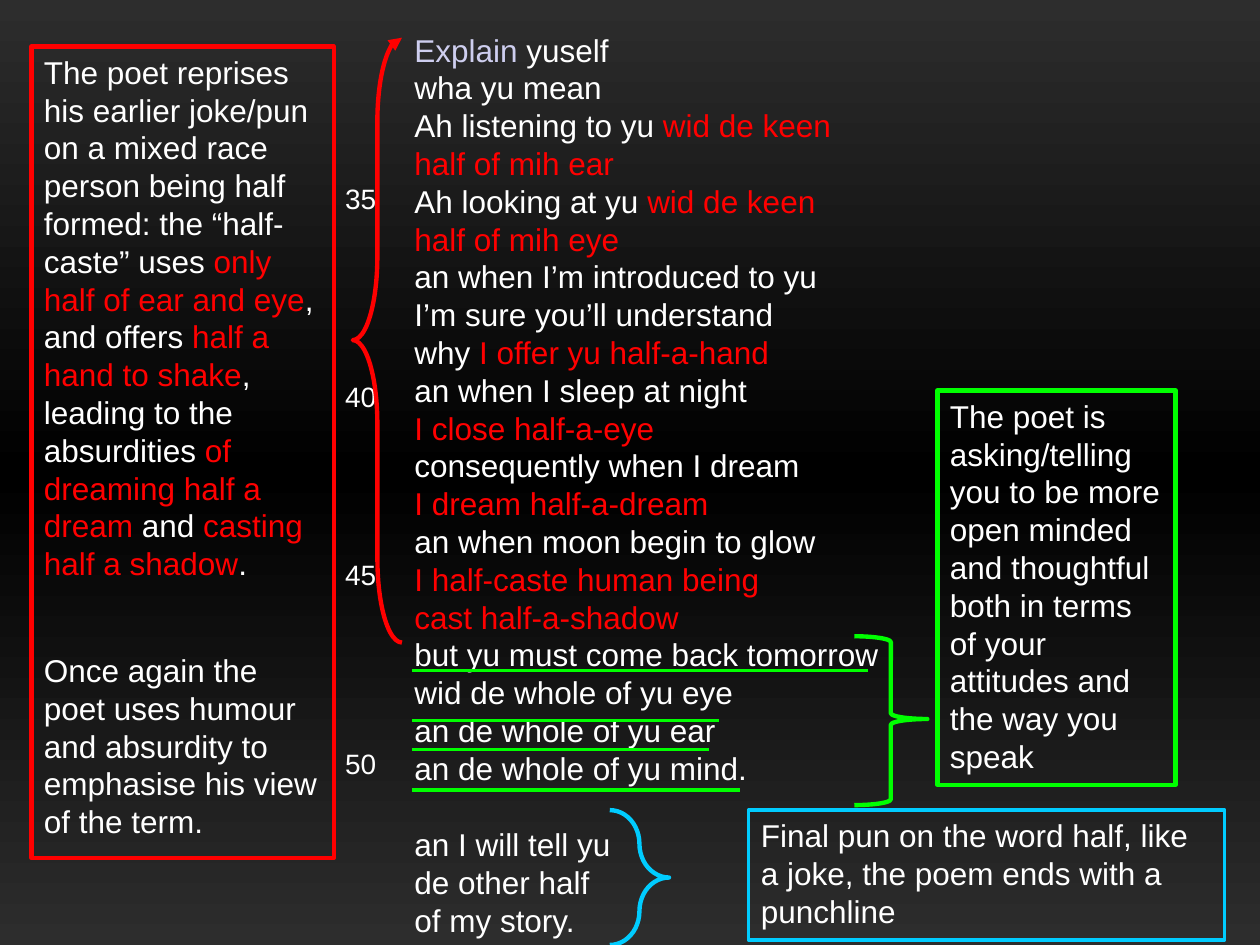
from copy import deepcopy

from lxml import etree
from pptx import Presentation
from pptx.dml.color import RGBColor
from pptx.enum.shapes import MSO_CONNECTOR, MSO_SHAPE
from pptx.enum.text import MSO_ANCHOR, MSO_AUTO_SIZE, PP_ALIGN
from pptx.oxml.ns import qn
from pptx.util import Inches, Pt

RECT = MSO_SHAPE.RECTANGLE
LEFT_BRACE = MSO_SHAPE.LEFT_BRACE
RIGHT_BRACE = MSO_SHAPE.RIGHT_BRACE
STRAIGHT = MSO_CONNECTOR.STRAIGHT
TOP, MIDDLE = MSO_ANCHOR.TOP, MSO_ANCHOR.MIDDLE
GROW = MSO_AUTO_SIZE.SHAPE_TO_FIT_TEXT
LEFT = PP_ALIGN.LEFT

FONT = "Arial"
COLORS = {
    "edge": "2D2D2D",
    "black": "000000",
    "white": "FFFFFF",
    "lavender": "CECEEF",
    "red": "FF0000",
    "green": "00FF00",
    "blue": "00CCFF",
}

# Each paragraph is a list of (color, text); "\n" is a line break.
POEM = [
    [
        ("lavender", "Explain "),
        ("white", "yuself\nwha yu mean\nAh listening to yu "),
        ("red", "wid de keen\nhalf of mih ear\n"),
        ("white", "Ah looking at yu "),
        ("red", "wid de keen\nhalf of mih eye\n"),
        ("white", "an when I’m introduced to yu\nI’m sure you’ll understand\nwhy "),
        ("red", "I offer yu half-a-hand\n"),
        ("white", "an when I sleep at night\n"),
        ("red", "I close half-a-eye\n"),
        ("white", "consequently when I dream\n"),
        ("red", "I dream half-a-dream\n"),
        ("white", "an when moon begin to glow\n"),
        ("red", "I half-caste human being\ncast half-a-shadow\n"),
        ("white", "but yu must come back tomorrow\nwid de whole of yu eye\n"
                  "an de whole of yu ear\nan de whole of yu mind."),
    ],
    [("white", "an I will tell yu\nde other half\nof my story.")],
]
REPRISE_NOTE = [
    [
        ("white", "The poet reprises his earlier joke/pun on a mixed race person "
                  "being half formed: the “half-caste” uses "),
        ("red", "only half of ear and eye"),
        ("white", ", and offers "),
        ("red", "half a hand to shake"),
        ("white", ", leading to the absurdities "),
        ("red", "of dreaming half a dream"),
        ("white", " and "),
        ("red", "casting half a shadow"),
        ("white", "."),
    ],
    [("white", "Once again the poet uses humour and absurdity to emphasise "
               "his view of the term.")],
]
OPEN_MIND_NOTE = [[("white", "The poet is asking/telling you to be more open minded "
                             "and thoughtful both in terms of your attitudes and "
                             "the way you speak")]]
PUNCHLINE_NOTE = [[("white", "Final pun on the word half, like a joke, the poem ends "
                             "with a punchline")]]

LINE_NUMBERS = [(35, 1.39), (40, 2.96), (45, 4.38), (50, 5.88)]  # number, top
UNDERLINES = [(5.32, 6.89), (5.72, 5.71), (5.95, 5.63), (6.27, 5.87)]  # y, right end


def rgb(name):
    return RGBColor.from_string(COLORS[name])


def set_background(slide):
    fill = slide.background.fill
    fill.gradient()
    fill.gradient_angle = 90
    first = slide.element.find(".//" + qn("a:gs"))
    first.addnext(deepcopy(first))
    stops = zip(fill.gradient_stops, (0, 0.5, 1), ("edge", "black", "edge"))
    for stop, position, color in stops:
        stop.position = position
        stop.color.rgb = rgb(color)


def write_text(sp, paragraphs, size=18, gap=0, anchor=TOP, wrap=True):
    """Fill a shape with colored runs; gap is the space between paragraphs."""
    tf = sp.text_frame
    tf.word_wrap = wrap
    tf.auto_size = GROW
    tf.vertical_anchor = anchor
    for i, parts in enumerate(paragraphs):
        p = tf.add_paragraph() if i else tf.paragraphs[0]
        p.alignment = LEFT
        p.font.name = FONT
        p.font.size = Pt(size)
        if i:
            p.space_before = Pt(gap)
        for color, text in parts:
            for j, line in enumerate(text.split("\n")):
                if j:
                    p.add_line_break()
                if line:
                    r = p.add_run()
                    r.text = line
                    r.font.color.rgb = rgb(color)


def add_text(slide, box, paragraphs, **style):
    sp = slide.shapes.add_textbox(*map(Inches, box))
    write_text(sp, paragraphs, **style)


def add_outline(slide, kind, box, color, width=2.5):
    sp = slide.shapes.add_shape(kind, *map(Inches, box))
    sp.shadow.inherit = False
    sp.fill.background()
    sp.line.color.rgb = rgb(color)
    sp.line.width = Pt(width)
    return sp


def add_note(slide, box, color, paragraphs, width=2.5, gap=0):
    sp = add_outline(slide, RECT, box, color, width)
    write_text(sp, paragraphs, gap=gap)


def add_brace(slide, kind, box, color, curl, tip=0.5, arrow=False):
    sp = add_outline(slide, kind, box, color)
    sp.adjustments[0] = curl
    sp.adjustments[1] = tip
    if arrow:
        ln = sp.line._get_or_add_ln()
        etree.SubElement(ln, qn("a:tailEnd"), type="triangle")


def add_underline(slide, left, right, y):
    line = slide.shapes.add_connector(
        STRAIGHT, Inches(left), Inches(y), Inches(right), Inches(y))
    line.line.color.rgb = rgb("green")
    line.line.width = Pt(2)
    etree.SubElement(line.element.spPr, qn("a:effectLst"))


def main():
    prs = Presentation()
    prs.slide_width, prs.slide_height = Inches(10), Inches(7.5)
    slide = prs.slides.add_slide(prs.slide_layouts[6])
    set_background(slide)

    # Poem with its line numbers
    add_text(slide, (3.19, 0.19, 3.88, 7.31), POEM, gap=22, anchor=MIDDLE, wrap=False)
    for number, top in LINE_NUMBERS:
        add_text(slide, (2.64, top, 0.55, 0.37), [[("white", str(number))]], size=16)

    # Half-and-half jokes
    add_brace(slide, LEFT_BRACE, (2.8, 0.3, 0.39, 4.8), "red", 1.7, arrow=True)
    add_note(slide, (0.25, 0.37, 2.4, 6.44), "red", REPRISE_NOTE, gap=39.5)

    # Call for an open mind
    for y, right in UNDERLINES:
        add_underline(slide, 3.27, right, y)
    add_note(slide, (7.44, 3.1, 1.89, 3.13), "green", OPEN_MIND_NOTE)

    # Closing punchline
    add_brace(slide, RIGHT_BRACE, (4.84, 6.43, 0.47, 1.07), "blue", 0.57)
    add_note(slide, (5.94, 6.43, 3.78, 1.03), "blue", PUNCHLINE_NOTE, width=2)

    # Brace from the underlined lines to the open-mind note
    add_brace(slide, RIGHT_BRACE, (6.78, 5.05, 0.58, 1.34), "green", 0.08, tip=0.49)

    prs.save("out.pptx")


if __name__ == "__main__":
    main()
